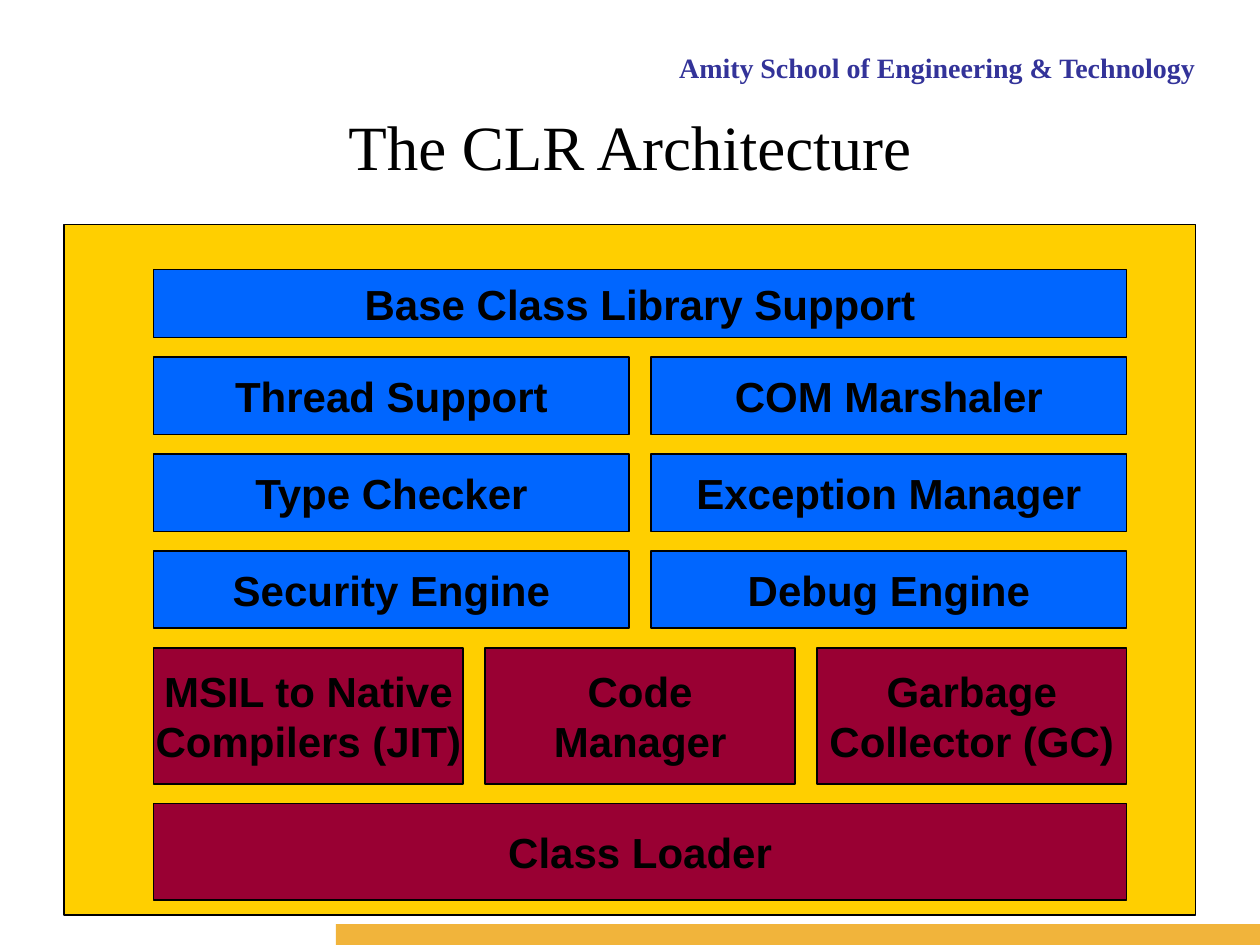
import pptx
import pptx.util
import pptx.dml.color
import pptx.enum.shapes
import pptx.enum.text

Pt = pptx.util.Pt
ALIGN = pptx.enum.text.PP_ALIGN
MIDDLE = pptx.enum.text.MSO_ANCHOR.MIDDLE


def paint(color_format, hex_color):
    color_format.rgb = pptx.dml.color.RGBColor.from_string(hex_color)


def write(paragraph, text, font, size, color, bold, align):
    paragraph.alignment = align
    run = paragraph.add_run()
    run.text = text
    run.font.name = font
    run.font.size = Pt(size)
    run.font.bold = bold
    paint(run.font.color, color)


deck = pptx.Presentation()
deck.slide_width, deck.slide_height = Pt(720), Pt(540)
slide = deck.slides.add_slide(deck.slide_layouts[5])

title = slide.shapes.title
title.left, title.top, title.width, title.height = Pt(36), Pt(54.7), Pt(648), Pt(57)
title.text_frame.vertical_anchor = MIDDLE
write(title.text_frame.paragraphs[0], "The CLR Architecture",
      "Times New Roman", 36, "000000", False, ALIGN.CENTER)

school = slide.shapes.add_textbox(Pt(324), Pt(24), Pt(366), Pt(24)).text_frame
school.word_wrap = True
school.margin_top = Pt(5)
write(school.paragraphs[0], "Amity School of Engineering & Technology",
      "Times New Roman", 16, "333399", True, ALIGN.RIGHT)

RECTANGLE = pptx.enum.shapes.MSO_SHAPE.RECTANGLE
footer_bar = slide.shapes.add_shape(RECTANGLE, Pt(192), Pt(528), Pt(528), Pt(12))
footer_bar.shadow.inherit = False
footer_bar.fill.solid()
paint(footer_bar.fill.fore_color, "F1B43B")
footer_bar.line.fill.background()

BLUE, RED = "0066FF", "990033"
layers = [
    (38.9, BLUE, ["Base Class Library Support"]),
    (44.3, BLUE, ["Thread Support", "COM Marshaler"]),
    (44.3, BLUE, ["Type Checker", "Exception Manager"]),
    (44.3, BLUE, ["Security Engine", "Debug Engine"]),
    (77.8, RED, ["MSIL to Native\nCompilers (JIT)", "Code\nManager", "Garbage\nCollector (GC)"]),
    (55.4, RED, ["Class Loader"]),
]
stack_left, stack_width, column_gap, row_gap = 87.8, 556, 12.5, 11.1

blocks = [(36.8, 128.2, 646.4, 394.6, "FFCF00", "")]
top = 154
for height, color, labels in layers:
    width = (stack_width - column_gap * (len(labels) - 1)) / len(labels)
    for column, label in enumerate(labels):
        left = stack_left + column * (width + column_gap)
        blocks.append((left, top, width, height, color, label))
    top += height + row_gap

architecture = slide.shapes.add_group_shape()
for left, top, width, height, color, label in blocks:
    block = architecture.shapes.add_shape(RECTANGLE, Pt(left), Pt(top), Pt(width), Pt(height))
    block.shadow.inherit = False
    block.fill.solid()
    paint(block.fill.fore_color, color)
    paint(block.line.color, "000000")
    block.line.width = Pt(1)
    if label:
        frame = block.text_frame
        frame.word_wrap = False
        frame.vertical_anchor = MIDDLE
        for index, line in enumerate(label.split("\n")):
            paragraph = frame.add_paragraph() if index else frame.paragraphs[0]
            write(paragraph, line, "Arial", 24, "000000", True, ALIGN.CENTER)

deck.save("out.pptx")
